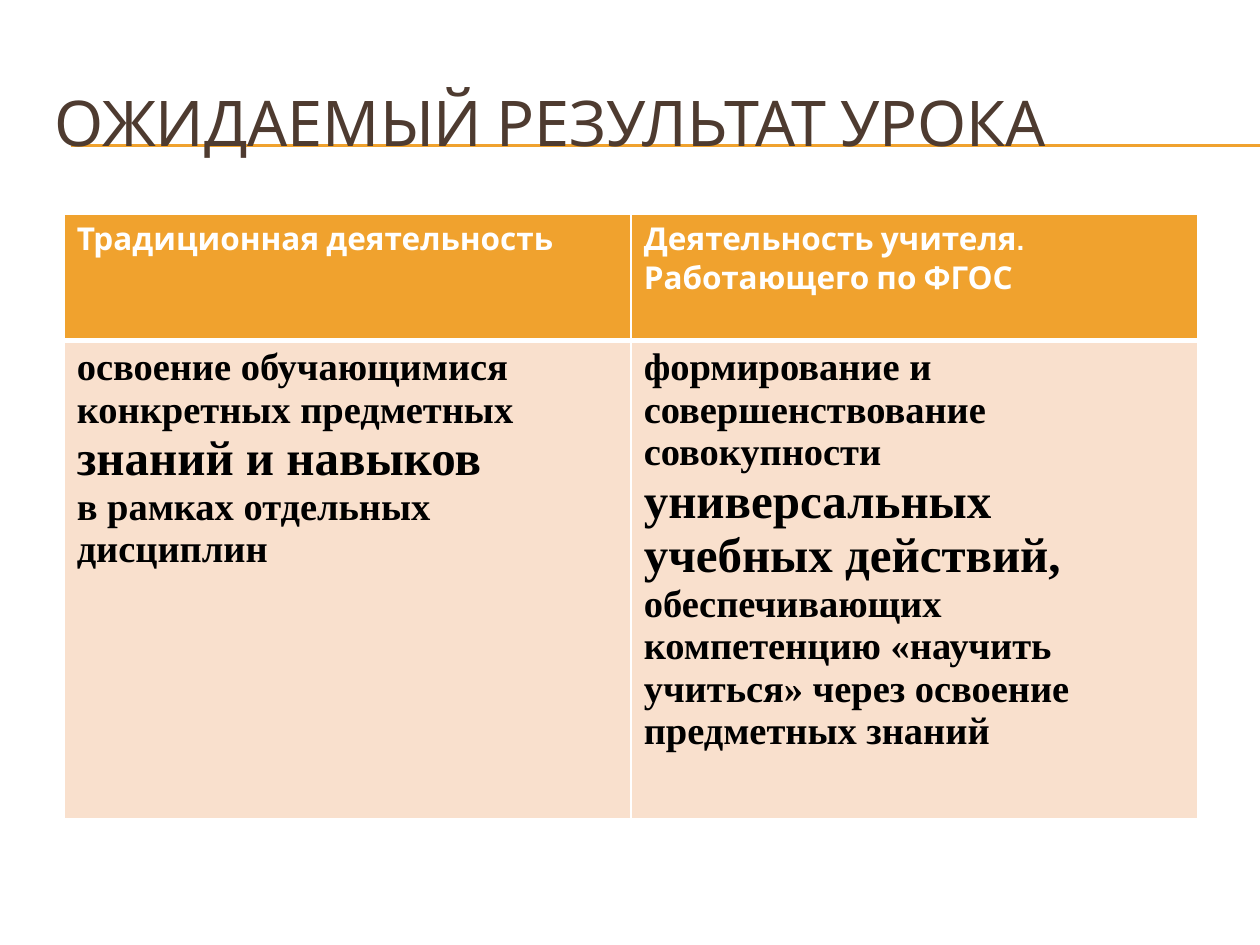
import pptx
import pptx.util
import pptx.dml.color
import pptx.enum.text
import pptx.oxml
import pptx.oxml.ns
from lxml import etree

Inches = pptx.util.Inches
Pt = pptx.util.Pt
qn = pptx.oxml.ns.qn

COLORS = {"gold": "F0A22E", "peach": "F9E0CD", "brown": "4E3B30",
          "white": "FFFFFF", "black": "000000"}
SANS, SERIF = "Cabin", "Times New Roman"

# Each cell is a list of paragraphs; each paragraph is a list of (text, size)
HEADS = [
    [[("Традиционная деятельность", 18)]],
    [[("Деятельность учителя. Работающего по ФГОС", 18)]],
]
BODIES = [
    [[("освоение обучающимися конкретных предметных", 22)],
     [("знаний и навыков", 28)],
     [("в рамках отдельных дисциплин", 22)]],
    [[("формирование и совершенствование совокупности ", 22),
      ("универсальных учебных действий, ", 28),
      ("обеспечивающих компетенцию «научить учиться» через освоение "
       "предметных знаний", 22)]],
]


def rgb(name):
    return pptx.dml.color.RGBColor.from_string(COLORS[name])


def add_run(para, text, size, font, color, bold):
    run = para.add_run()
    run.text = text
    run.font.size = Pt(size)
    run.font.name = font
    run.font.bold = bold
    run.font.color.rgb = rgb(color)


def add_rules(slide, left, top, width, gap):
    """Draw the thin double rule behind the title."""
    for y in (top, top + gap):
        rule = slide.shapes.add_connector(
            pptx.enum.shapes.MSO_CONNECTOR.STRAIGHT,
            left, y, left + width, y)
        rule.line.color.rgb = rgb("gold")
        rule.line.width = Pt(0.75)
        etree.SubElement(rule._element.spPr, qn("a:effectLst"))


def add_title(slide, left, top, width, height):
    title = slide.shapes.title
    title.left, title.top = left, top
    title.width, title.height = width, height
    frame = title.text_frame
    frame.word_wrap = True
    frame.auto_size = pptx.enum.text.MSO_AUTO_SIZE.NONE
    frame.vertical_anchor = pptx.enum.text.MSO_ANCHOR.MIDDLE
    para = frame.paragraphs[0]
    para.alignment = pptx.enum.text.PP_ALIGN.LEFT
    add_run(para, "ОЖИДАЕМЫЙ РЕЗУЛЬТАТ УРОКА", 36, SANS, "brown", False)
    # Keep the title in front of the rules
    slide.shapes._spTree.append(title._element)


def set_edges(cell, widths):
    """Give the cell white borders; widths maps L, R, T, B to points."""
    props = cell._tc.get_or_add_tcPr()
    for side, width in widths.items():
        edge = etree.SubElement(props, qn("a:ln" + side), w=str(Pt(width)))
        fill = etree.SubElement(edge, qn("a:solidFill"))
        etree.SubElement(fill, qn("a:srgbClr"), val=COLORS["white"])


def fill_cell(cell, paras, font, color, back, edges):
    set_edges(cell, edges)
    cell.fill.solid()
    cell.fill.fore_color.rgb = rgb(back)
    frame = cell.text_frame
    for i, runs in enumerate(paras):
        para = frame.add_paragraph() if i else frame.paragraphs[0]
        for text, size in runs:
            add_run(para, text, size, font, color, True)


def add_table(slide, left, top, width, height):
    table = slide.shapes.add_table(2, 2, left, top, width, height).table
    table.rows[0].height = Inches(1)
    table.rows[1].height = height - Inches(1)
    styles = [
        (HEADS, SANS, "white", "gold", {"L": 1, "R": 1, "T": 1, "B": 3}),
        (BODIES, SERIF, "black", "peach", {"L": 1, "R": 1, "T": 3, "B": 1}),
    ]
    for row, (cells, *style) in enumerate(styles):
        for col, paras in enumerate(cells):
            fill_cell(table.cell(row, col), paras, *style)


def main():
    deck = pptx.Presentation()
    deck.slide_width, deck.slide_height = Inches(10), Inches(7.5)
    slide = deck.slides.add_slide(deck.slide_layouts[5])
    slide.background.fill.solid()
    slide.background.fill.fore_color.rgb = rgb("white")
    add_rules(slide, Inches(0.56), Inches(1.15), Inches(9.44), Inches(0.01))
    add_title(slide, Inches(0.33), Inches(0.5), Inches(9.5), Inches(0.92))
    add_table(slide, Inches(0.51), Inches(1.7), Inches(9), Inches(4.8))
    deck.save("out.pptx")


if __name__ == "__main__":
    main()
